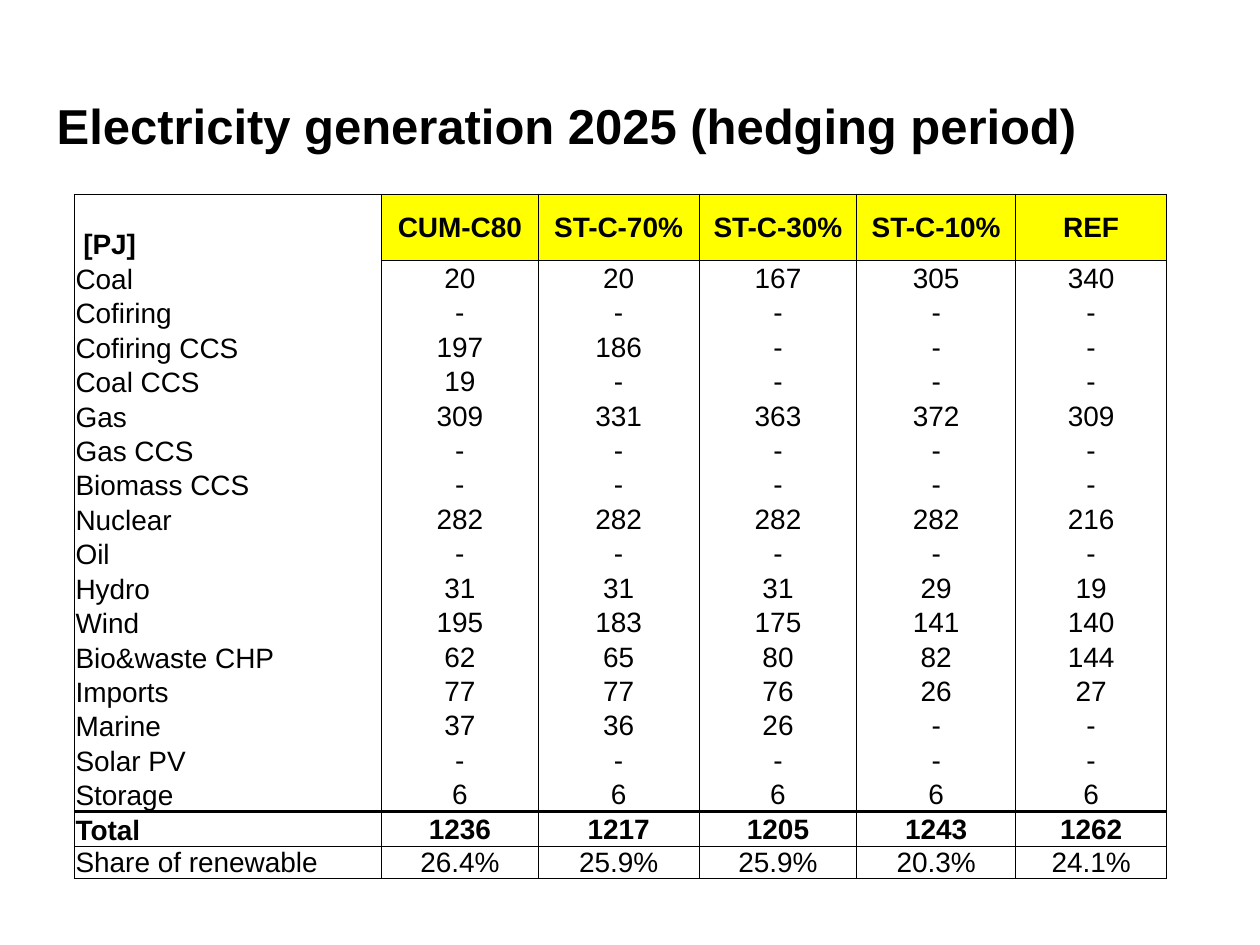
from pptx import Presentation
from pptx.dml.color import RGBColor
from pptx.enum.text import MSO_ANCHOR, PP_ALIGN
from pptx.oxml import parse_xml
from pptx.oxml.ns import nsdecls
from pptx.util import Inches, Pt

BLACK = "000000"
YELLOW = "FFFF00"
THIN, THICK = 0.5, 2

ROWS = [
    [" [PJ]", "CUM-C80", "ST-C-70%", "ST-C-30%", "ST-C-10%", "REF"],
    ["Coal", "20", "20", "167", "305", "340"],
    ["Cofiring", "-", "-", "-", "-", "-"],
    ["Cofiring CCS", "197", "186", "-", "-", "-"],
    ["Coal CCS", "19", "-", "-", "-", "-"],
    ["Gas", "309", "331", "363", "372", "309"],
    ["Gas CCS", "-", "-", "-", "-", "-"],
    ["Biomass CCS", "-", "-", "-", "-", "-"],
    ["Nuclear", "282", "282", "282", "282", "216"],
    ["Oil", "-", "-", "-", "-", "-"],
    ["Hydro", "31", "31", "31", "29", "19"],
    ["Wind", "195", "183", "175", "141", "140"],
    ["Bio&waste CHP", "62", "65", "80", "82", "144"],
    ["Imports", "77", "77", "76", "26", "27"],
    ["Marine", "37", "36", "26", "-", "-"],
    ["Solar PV", "-", "-", "-", "-", "-"],
    ["Storage", "6", "6", "6", "6", "6"],
    ["Total", "1236", "1217", "1205", "1243", "1262"],
    ["Share of renewable", "26.4%", "25.9%", "25.9%", "20.3%", "24.1%"],
]
HEAD, LAST = 0, len(ROWS) - 1
TOTAL = LAST - 1
WIDTHS = [2.44, 1.24, 1.28, 1.25, 1.26, 1.2]
TOP, BODY, FOOT = 0.53, 4.65, 0.26
HEIGHTS = [TOP] + [BODY / TOTAL] * TOTAL + [FOOT]


def color(code):
    return RGBColor.from_string(code)


def rule(row, col):
    """Width of the line above a row; 0 means no line."""
    if row == TOTAL:
        return THICK
    if row == HEAD + 1:
        return THIN if col else 0
    return THIN if row in (HEAD, LAST, LAST + 1) else 0


class Deck:
    font = "Arial"

    def __init__(self):
        self.prs = Presentation()
        self.prs.slide_width = Inches(10)
        self.prs.slide_height = Inches(7.5)
        self.slide = self.prs.slides.add_slide(self.prs.slide_layouts[5])

    def style(self, para, size, bold, align):
        para.alignment = align
        for run in para.runs:
            run.font.name = self.font
            run.font.size = Pt(size)
            run.font.bold = bold
            run.font.color.rgb = color(BLACK)

    def title(self, text, left, top, width, height):
        box = self.slide.shapes.title
        box.left, box.top = Inches(left), Inches(top)
        box.width, box.height = Inches(width), Inches(height)
        frame = box.text_frame
        frame.text = text
        frame.vertical_anchor = MSO_ANCHOR.MIDDLE
        self.style(frame.paragraphs[0], 28, True, PP_ALIGN.LEFT)

    def border(self, cell, side, width):
        paint = f'<a:solidFill><a:srgbClr val="{BLACK}"/></a:solidFill>' if width else "<a:noFill/>"
        line = f'<a:ln{side} {nsdecls("a")} w="{Pt(width)}">{paint}</a:ln{side}>'
        cell._tc.get_or_add_tcPr().append(parse_xml(line))

    def cell(self, cell, text, row, col):
        cell.margin_left = cell.margin_right = cell.margin_top = Inches(0.01)
        cell.margin_bottom = 0
        cell.vertical_anchor = MSO_ANCHOR.MIDDLE if col else MSO_ANCHOR.BOTTOM
        cell.text_frame.text = text
        align = PP_ALIGN.CENTER if col else PP_ALIGN.LEFT
        self.style(cell.text_frame.paragraphs[0], 16, row in (HEAD, TOTAL), align)
        for side, width in (("L", THIN), ("R", THIN),
                            ("T", rule(row, col)), ("B", rule(row + 1, col))):
            self.border(cell, side, width)
        if row == HEAD and col:
            cell.fill.solid()
            cell.fill.fore_color.rgb = color(YELLOW)
        else:
            cell.fill.background()

    def table(self, rows, left, top, widths, heights):
        frame = self.slide.shapes.add_table(
            len(rows), len(widths), Inches(left), Inches(top),
            Inches(sum(widths)), Inches(sum(heights)))
        table = frame.table
        table.first_row = table.horz_banding = False
        for column, width in zip(table.columns, widths):
            column.width = Inches(width)
        for line, height in zip(table.rows, heights):
            line.height = Inches(height)
        for row, texts in enumerate(rows):
            for col, text in enumerate(texts):
                self.cell(table.cell(row, col), text, row, col)


def main():
    deck = Deck()
    deck.title("Electricity generation 2025 (hedging period)", 0.35, 0.68, 9.28, 0.63)
    deck.table(ROWS, 0.59, 1.54, WIDTHS, HEIGHTS)
    deck.prs.save("out.pptx")


if __name__ == "__main__":
    main()
